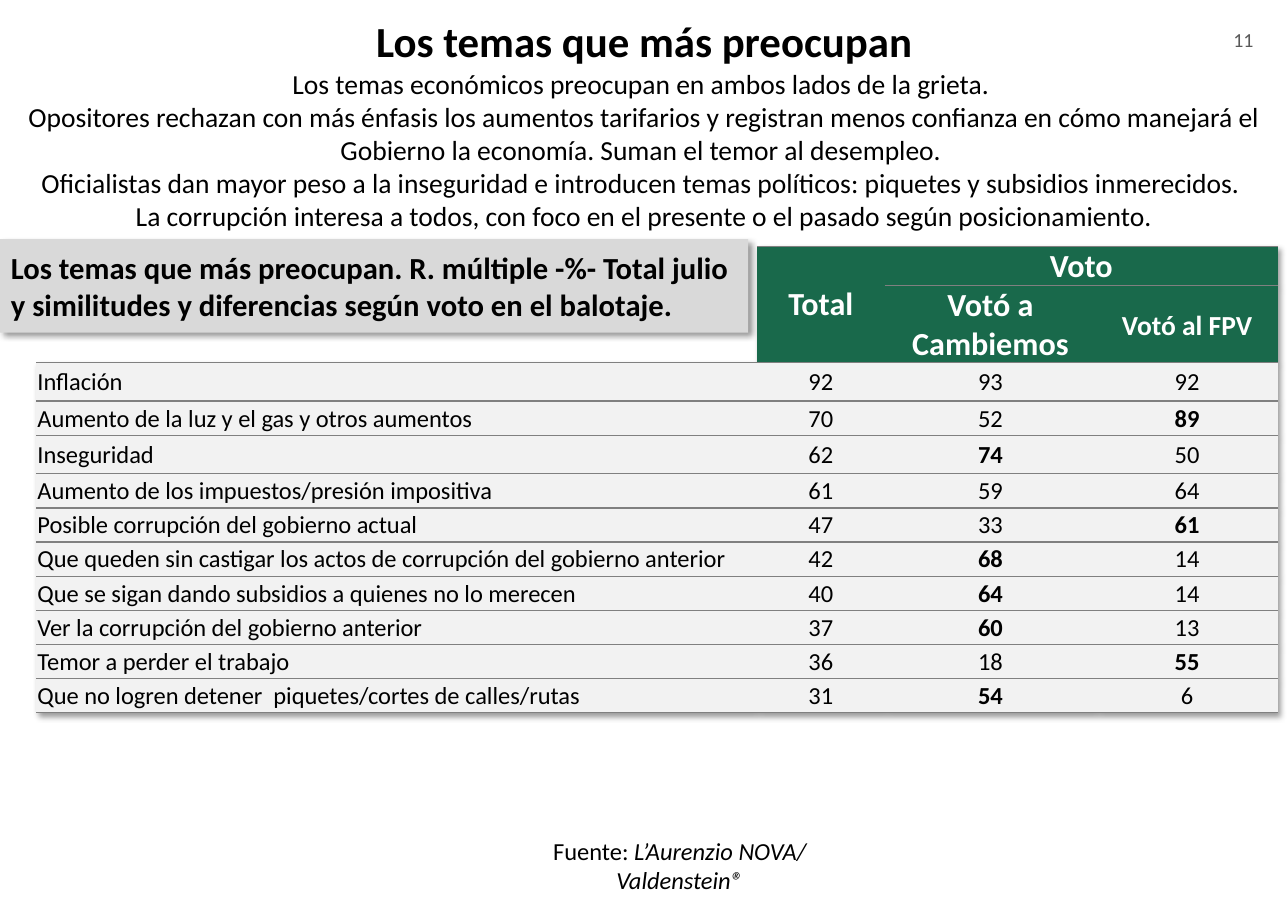
from collections import namedtuple
from dataclasses import dataclass

from lxml.etree import SubElement
from pptx import Presentation
from pptx.dml.color import RGBColor
from pptx.enum.shapes import MSO_SHAPE
from pptx.enum.text import MSO_ANCHOR, PP_ALIGN
from pptx.oxml import parse_xml
from pptx.oxml.ns import nsdecls, qn
from pptx.util import Pt

EMU_PER_PX = 9144
Box = namedtuple("Box", "left top width height")


@dataclass(frozen=True)
class Theme:
    font: str = "Calibri"
    ink: str = "000000"
    muted: str = "595959"
    label: str = "D9D9D9"
    header: str = "19694B"
    header_ink: str = "FFFFFF"
    row: str = "F2F2F2"
    rule: str = "808080"
    title_size: int = 28
    column_size: int = 21
    label_size: int = 20
    summary_size: int = 18
    body_size: int = 16
    number_size: int = 13


THEME = Theme()
NO_STYLE = "{2D5ABB26-0587-4C30-8999-92F81FD0307C}"
TITLE = "Los temas que más preocupan"
SUMMARY = [
    "Los temas económicos preocupan en ambos lados de la grieta. ",
    "Opositores rechazan con más énfasis los aumentos tarifarios y registran menos confianza "
    "en cómo manejará el Gobierno la economía. Suman el temor al desempleo. ",
    "Oficialistas dan mayor peso a la inseguridad e introducen temas políticos: "
    "piquetes y subsidios inmerecidos. ",
    "La corrupción interesa a todos, con foco en el presente o el pasado según posicionamiento.",
]
LABEL = ("Los temas que más preocupan. R. múltiple -%- Total julio "
         "y similitudes y diferencias según voto en el balotaje.")
CONCERNS = [
    ("Inflación", 92, 93, 92),
    ("Aumento de la luz y el gas y otros aumentos", 70, 52, 89),
    ("Inseguridad", 62, 74, 50),
    ("Aumento de los impuestos/presión impositiva", 61, 59, 64),
    ("Posible corrupción del gobierno actual", 47, 33, 61),
    ("Que queden sin castigar los actos de corrupción del gobierno anterior", 42, 68, 14),
    ("Que se sigan dando subsidios a quienes no lo merecen", 40, 64, 14),
    ("Ver la corrupción del gobierno anterior", 37, 60, 13),
    ("Temor a perder el trabajo", 36, 18, 55),
    ("Que no logren detener  piquetes/cortes de calles/rutas", 31, 54, 6),
]
COLUMN_WIDTHS = [654, 116, 192, 165]
ROW_HEIGHTS = [29, 58, 35, 31, 35] + [31] * 7
CLEAR_LEAD = 10


def px(length):
    return length * EMU_PER_PX


def paint(fill, color):
    fill.solid()
    fill.fore_color.rgb = RGBColor.from_string(color)


def format_text(text_frame, size, color=THEME.ink, bold=False, align=PP_ALIGN.CENTER):
    for paragraph in text_frame.paragraphs:
        paragraph.alignment = align
        for run in paragraph.runs:
            run.font.name = THEME.font
            run.font.size = Pt(size)
            run.font.bold = bold
            run.font.color.rgb = RGBColor.from_string(color)


def soft_shadow():
    return parse_xml(
        f'<a:effectLst {nsdecls("a")}><a:outerShdw blurRad="{Pt(4)}" dist="{Pt(3)}" '
        'dir="2700000" algn="tl" rotWithShape="0"><a:srgbClr val="000000">'
        '<a:alpha val="40000"/></a:srgbClr></a:outerShdw></a:effectLst>')


def add_text(slide, box, text, size, color=THEME.ink, bold=False, anchor=MSO_ANCHOR.TOP):
    text_frame = slide.shapes.add_textbox(*map(px, box)).text_frame
    text_frame.word_wrap = True
    text_frame.vertical_anchor = anchor
    text_frame.text = text
    format_text(text_frame, size, color, bold)
    return text_frame


def add_heading(slide, box):
    number_box = Box(box.left + 1084, box.top + 30, 89, 44)
    add_text(slide, number_box, "11", THEME.number_size, THEME.muted)
    summary_box = Box(box.left, box.top + 65, box.width, 162)
    add_text(slide, summary_box, "\n".join(SUMMARY), THEME.summary_size, anchor=MSO_ANCHOR.MIDDLE)
    title_box = Box(box.left, box.top, box.width, 94)
    add_text(slide, title_box, TITLE, THEME.title_size, bold=True, anchor=MSO_ANCHOR.MIDDLE)


def add_label(slide, box):
    shape = slide.shapes.add_shape(MSO_SHAPE.RECTANGLE, *map(px, box))
    paint(shape.fill, THEME.label)
    shape.line.fill.background()
    shape.shadow.inherit = False
    properties = shape._element.spPr
    properties.replace(properties.find(qn("a:effectLst")), soft_shadow())
    text_frame = shape.text_frame
    text_frame.word_wrap = True
    text_frame.vertical_anchor = MSO_ANCHOR.MIDDLE
    text_frame.text = LABEL
    format_text(text_frame, THEME.label_size, bold=True, align=PP_ALIGN.LEFT)


def add_borders(cell, sides):
    properties = cell._tc.get_or_add_tcPr()
    for position, side in enumerate(sides):
        line = parse_xml(
            f'<a:{side} {nsdecls("a")} w="{Pt(1)}"><a:solidFill>'
            f'<a:srgbClr val="{THEME.rule}"/></a:solidFill></a:{side}>')
        properties.insert(position, line)


def fill_cell(cell, text, fill, size, color, bold, align, side_margin, top_margin):
    paint(cell.fill, fill)
    cell.vertical_anchor = MSO_ANCHOR.MIDDLE
    cell.margin_left = cell.margin_right = px(side_margin)
    cell.margin_top, cell.margin_bottom = px(top_margin), 0
    cell.text = text
    format_text(cell.text_frame, size, color, bold, align)


def add_column_heads(table):
    table.cell(0, 0).merge(table.cell(1, 0))
    table.cell(0, 1).merge(table.cell(1, 1))
    table.cell(0, 2).merge(table.cell(0, 3))
    heads = [
        (0, 1, "Total", THEME.column_size, 5),
        (0, 2, "Voto", THEME.column_size, 7),
        (1, 2, "Votó a Cambiemos", THEME.column_size, 7),
        (1, 3, "Votó al FPV", THEME.summary_size, 7),
    ]
    for row, column, text, size, margin in heads:
        fill_cell(table.cell(row, column), text, THEME.header, size, THEME.header_ink,
                  True, PP_ALIGN.CENTER, margin, 0)
    table.cell(1, 3).text_frame.paragraphs[0].line_spacing = 1.15


def add_concern_rows(table):
    for row, concern in enumerate(CONCERNS, start=2):
        government, opposition = concern[2:]
        leads = [0, 0, government - opposition, opposition - government]
        for column, value in enumerate(concern):
            align = PP_ALIGN.CENTER if column else PP_ALIGN.LEFT
            fill_cell(table.cell(row, column), str(value), THEME.row, THEME.body_size,
                      THEME.ink, leads[column] > CLEAR_LEAD, align, 1, 1)


def add_concerns_table(slide, box):
    frame = slide.shapes.add_table(len(ROW_HEIGHTS), len(COLUMN_WIDTHS), *map(px, box))
    table = frame.table
    table.first_row = table.horz_banding = False
    properties = table._tbl.tblPr
    for child in list(properties):
        properties.remove(child)
    properties.append(soft_shadow())
    SubElement(properties, qn("a:tableStyleId")).text = NO_STYLE
    for column, width in zip(table.columns, COLUMN_WIDTHS):
        column.width = px(width)
    for row, height in zip(table.rows, ROW_HEIGHTS):
        row.height = px(height)
    add_column_heads(table)
    add_concern_rows(table)
    corner = table.cell(0, 0)
    add_borders(corner, ["lnB"])
    for cell in table.iter_cells():
        if cell != corner and not cell.is_spanned:
            add_borders(cell, ["lnT", "lnB"])


def add_source(slide, box):
    text_frame = add_text(slide, box, "Fuente: ", THEME.body_size)
    name = text_frame.paragraphs[0].add_run()
    name.text = "L’Aurenzio NOVA/ Valdenstein®"
    format_text(text_frame, THEME.body_size)
    name.font.italic = True


def main():
    presentation = Presentation()
    presentation.slide_width, presentation.slide_height = px(1169), px(827)
    slide = presentation.slides.add_slide(presentation.slide_layouts[6])
    add_heading(slide, Box(0, -10, 1169, 227))
    add_label(slide, Box(0, 217, 679, 85))
    add_concerns_table(slide, Box(33, 224, sum(COLUMN_WIDTHS), sum(ROW_HEIGHTS)))
    add_source(slide, Box(436, 754, 362, 37))
    presentation.save("out.pptx")


if __name__ == "__main__":
    main()
